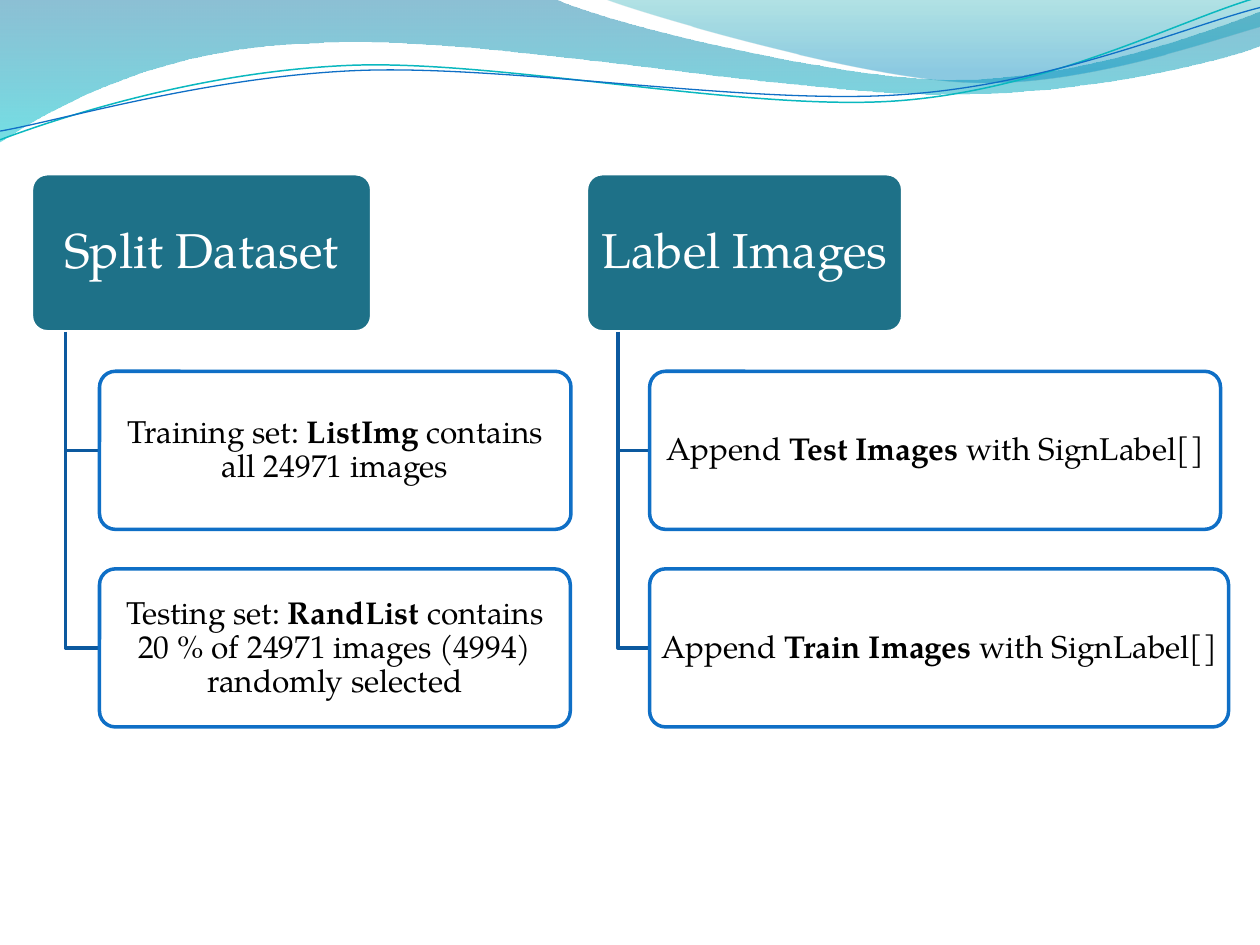
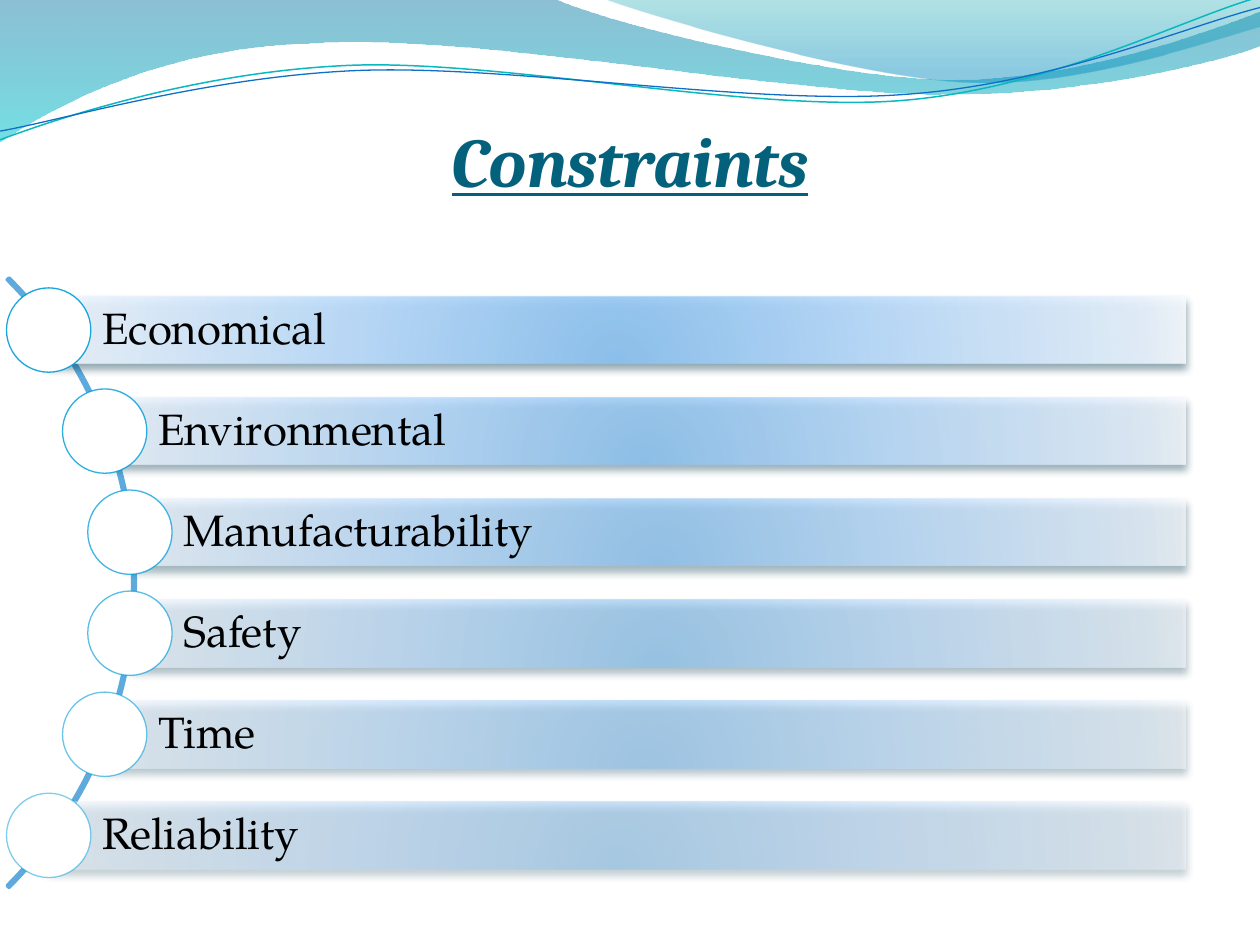
"""Build two slides: a dataset outline and a list of project constraints."""
import math

import lxml.etree
import pptx
import pptx.dml.color
import pptx.enum.shapes
import pptx.enum.text
import pptx.oxml
import pptx.oxml.ns
import pptx.util

Pt = pptx.util.Pt
RGB = pptx.dml.color.RGBColor.from_string
qn = pptx.oxml.ns.qn
SHAPE = pptx.enum.shapes.MSO_SHAPE
ALIGN = pptx.enum.text.PP_ALIGN
ANCHOR = pptx.enum.text.MSO_ANCHOR

THEME = {
    "white": "FFFFFF", "black": "000000", "title": "04617B", "head": "1E7188",
    "blue": "0F6FC6", "elbow": "0C599F", "teal": "0AB8BF",
    "arc": "5EAADD", "ring": "009DD9", "shadow": "00374C",
    "deep_wave": [(0, "0074A1", 45), (100, "00C6CF", 55)],
    "light_wave": [(0, "00A1A9", 30), (80, "008BBF", 45)],
    "bar": [(0, "8BC2F1"), (43, "B9DBFD"), (93, "EAF3FE"), (100, "F8FBFF")],
    "body_font": "TeX Gyre Pagella", "title_font": "Cambria",
    "title_size": 40, "head_size": 28, "bar_size": 25, "leaf_size": 18,
}
LINEAR = '<a:lin ang="5400000" scaled="0"/>'
RADIAL = ('<a:path path="circle"><a:fillToRect l="50000" t="130000" '
          'r="50000" b="-30000"/></a:path>')


def style(sp, fill=None, line=None, width=1, direction=LINEAR):
    sp.shadow.inherit = False
    if isinstance(fill, str):
        sp.fill.solid()
        sp.fill.fore_color.rgb = RGB(fill)
    else:
        sp.fill.background()
    if isinstance(fill, list):
        stops = "".join(
            f'<a:gs pos="{pos * 1000}"><a:srgbClr val="{color}">'
            f'<a:alpha val="{alpha * 1000}"/></a:srgbClr></a:gs>'
            for pos, color, alpha in fill)
        grad = pptx.oxml.parse_xml(
            f'<a:gradFill {pptx.oxml.ns.nsdecls("a")} rotWithShape="1">'
            f'<a:gsLst>{stops}</a:gsLst>{direction}</a:gradFill>')
        sp_pr = sp.element.spPr
        sp_pr.replace(sp_pr.find(qn("a:noFill")), grad)
    if line:
        sp.line.color.rgb = RGB(line)
        sp.line.width = Pt(width)
    else:
        sp.line.fill.background()


def write(sp, runs, color, font, margins, align=ALIGN.CENTER,
          anchor=ANCHOR.MIDDLE, spacing=0.9):
    tf = sp.text_frame
    sides = ("margin_left", "margin_top", "margin_right", "margin_bottom")
    frame = dict(zip(sides, map(Pt, margins)))
    frame |= {"word_wrap": True, "vertical_anchor": anchor}
    for name, value in frame.items():
        setattr(tf, name, value)
    p = tf.paragraphs[0]
    p.alignment = align
    p.line_spacing = spacing
    for text, bold in runs:
        r = p.add_run()
        r.text = text
        for name, value in ({"bold": bold} | font).items():
            setattr(r.font, name, value)
        r.font.color.rgb = RGB(color)


prs = pptx.Presentation()
prs.slide_width, prs.slide_height = Pt(720), Pt(540)
blank = prs.slide_layouts[6]
outline = prs.slides.add_slide(blank)
constraints = prs.slides.add_slide(blank)

waves = [
    ((0, 0), [
        (316.8, -0.7),
        (342.7, 12.2, 478.1, 45.4, 545.8, 45.4),
        (614.2, 45.4, 689.8, 18.7, 720, 6.5),
        (720.7, 25.9),
        (707.8, 31.7, 626.4, 54.7, 537.1, 54),
        (447.8, 54, 275, 20.2, 185, 24.5),
        (92.9, 25.9, 33.1, 59.8, -0.7, 81.4)],
     {"fill": THEME["deep_wave"]}),
    ((344.9, -0.7), [
        (366.5, 7.9, 491, 44.6, 553.7, 46.8),
        (616.3, 49.7, 691.9, 23, 720, 15.1),
        (720, 0)],
     {"fill": THEME["light_wave"]}),
    ((0, 79.9), [
        (34.6, 67, 113.8, 41, 199.4, 37.4),
        (284.4, 33.8, 427, 64.1, 513.4, 57.6),
        (599.8, 51.1, 675.4, 10.8, 718.6, -1.4)],
     {"line": THEME["teal"], "width": 0.85}),
    ((0, 74.9), [
        (33.8, 69.1, 118.1, 43.9, 203.8, 40.3),
        (290.2, 36.7, 429.8, 60.5, 516.2, 54),
        (601.9, 48.2, 677.5, 15.1, 720, 4.3)],
     {"line": THEME["blue"], "width": 0.75}),
]
for number, (start, steps, look) in enumerate(waves, 1):
    builder = outline.shapes.build_freeform(*map(Pt, start))
    builder.add_line_segments(
        [(Pt(x), Pt(y)) for step in steps for x, y in zip(step[::2], step[1::2])],
        close="fill" in look)
    sp = builder.convert_to_shape()
    vertices = iter(sp.element.spPr.findall(".//" + qn("a:lnTo")))
    for step in steps:
        group = [next(vertices) for _ in step[::2]]
        if len(group) == 3:
            curve = lxml.etree.Element(qn("a:cubicBezTo"))
            group[0].addprevious(curve)
            for vertex in group:
                curve.append(vertex[0])
                vertex.getparent().remove(vertex)
    style(sp, **look)
    sp.name = f"Wave {number}"
    sp.element.nvSpPr.cNvPr.set("id", str(100 + number))
    prs.slide_master.element.cSld.spTree.append(sp.element)

branches = [
    ("Split Dataset", 18, 194.4, [
        (269.4, [("Training set: ", False), ("ListImg", True),
                 (" contains all 24971 images", False)]),
        (269, [("Testing set: ", False), ("RandList", True),
               (" contains 20 % of 24971 images (4994) randomly selected", False)])]),
    ("Label Images", 335.1, 180.7, [
        (326.2, [("Append ", False), ("Test Images ", True),
                 ("with SignLabel[]", False)]),
        (330.8, [("Append ", False), ("Train Images ", True),
                 ("with SignLabel[]", False)])]),
]
HEAD_TOP, BOX_HEIGHT, ROW_PITCH = 99.3, 90.3, 112.9
head_font = {"name": THEME["body_font"], "size": Pt(THEME["head_size"])}
leaf_font = {"name": THEME["body_font"], "size": Pt(THEME["leaf_size"])}
for heading, left, width, leaves in branches:
    sp = outline.shapes.add_shape(
        SHAPE.ROUNDED_RECTANGLE, Pt(left), Pt(HEAD_TOP), Pt(width), Pt(BOX_HEIGHT))
    sp.adjustments[0] = 0.1
    style(sp, THEME["head"], THEME["white"], 2)
    write(sp, [(heading, False)], THEME["white"], head_font, (4.2, 2.8, 4.2, 2.8))
    stem, leaf_left = left + width * 0.1, left + width * 0.2
    for row, (leaf_width, runs) in enumerate(leaves, 1):
        top = HEAD_TOP + row * ROW_PITCH
        middle = Pt(top + BOX_HEIGHT / 2)
        builder = outline.shapes.build_freeform(Pt(stem), Pt(HEAD_TOP + BOX_HEIGHT))
        builder.add_line_segments(
            [(Pt(stem), middle), (Pt(leaf_left), middle)], close=False)
        style(builder.convert_to_shape(), line=THEME["elbow"], width=2)
        sp = outline.shapes.add_shape(
            SHAPE.ROUNDED_RECTANGLE, Pt(leaf_left), Pt(top), Pt(leaf_width), Pt(BOX_HEIGHT))
        sp.adjustments[0] = 0.1
        style(sp, THEME["white"], THEME["blue"], 2)
        write(sp, runs, THEME["black"], leaf_font, (2.7, 1.8, 2.7, 1.8))

title = constraints.shapes.add_textbox(Pt(36), Pt(25.2), Pt(648), Pt(90))
title_font = {"name": THEME["title_font"], "size": Pt(THEME["title_size"]),
              "italic": True, "underline": True}
write(title, [("Constraints", True)], THEME["title"], title_font,
      (0, 3.6, 0, 0), anchor=ANCHOR.BOTTOM, spacing=1.0)

ARC_X, ARC_Y, ARC_SIZE = -168.9, 333, 492.5
RING_ORIGIN, RING_RADIUS, RING_SIZE = -164.5, 240.5, 48.2
BAR_PITCH, BAR_HEIGHT, BAR_RIGHT = 57.75, 38.6, 677.6
arc = constraints.shapes.add_shape(
    SHAPE.BLOCK_ARC, Pt(ARC_X - ARC_SIZE / 2), Pt(ARC_Y - ARC_SIZE / 2),
    Pt(ARC_SIZE), Pt(ARC_SIZE))
for i, value in enumerate((189, 27, 0.003)):
    arc.adjustments[i] = value
style(arc, line=THEME["arc"], width=2)

bar_font = {"name": THEME["body_font"], "size": Pt(THEME["bar_size"])}
labels = ["Economical", "Environmental", "Manufacturability",
          "Safety", "Time", "Reliability"]
for i, label in enumerate(labels):
    alpha = 90 - 8 * i
    offset = (i - (len(labels) - 1) / 2) * BAR_PITCH
    x = RING_ORIGIN + math.sqrt(RING_RADIUS ** 2 - offset ** 2)
    y = ARC_Y + offset
    box = [Pt(v) for v in (x, y - BAR_HEIGHT / 2, BAR_RIGHT - x, BAR_HEIGHT)]
    bar = constraints.shapes.add_shape(SHAPE.RECTANGLE, *box)
    style(bar, [(*stop, alpha) for stop in THEME["bar"]], direction=RADIAL)
    bar.element.spPr.find(qn("a:effectLst")).append(pptx.oxml.parse_xml(
        f'<a:outerShdw {pptx.oxml.ns.nsdecls("a")} blurRad="{Pt(4.5)}" '
        f'dist="{Pt(3)}" dir="5400000" rotWithShape="0">'
        f'<a:srgbClr val="{THEME["shadow"]}"><a:alpha val="48000"/></a:srgbClr>'
        '</a:outerShdw>'))
    write(constraints.shapes.add_textbox(*box), [(label, False)], THEME["black"],
          bar_font, (30.5, 5, 5, 5), align=ALIGN.LEFT)
    ring = constraints.shapes.add_shape(
        SHAPE.OVAL, Pt(x - RING_SIZE / 2), Pt(y - RING_SIZE / 2),
        Pt(RING_SIZE), Pt(RING_SIZE))
    style(ring, THEME["white"], THEME["ring"], 0.75)
    ring_color = ring.element.spPr.find(qn("a:ln")).find(".//" + qn("a:srgbClr"))
    ring_color.append(pptx.oxml.parse_xml(
        f'<a:alpha {pptx.oxml.ns.nsdecls("a")} val="{alpha * 1000}"/>'))

prs.save("out.pptx")
